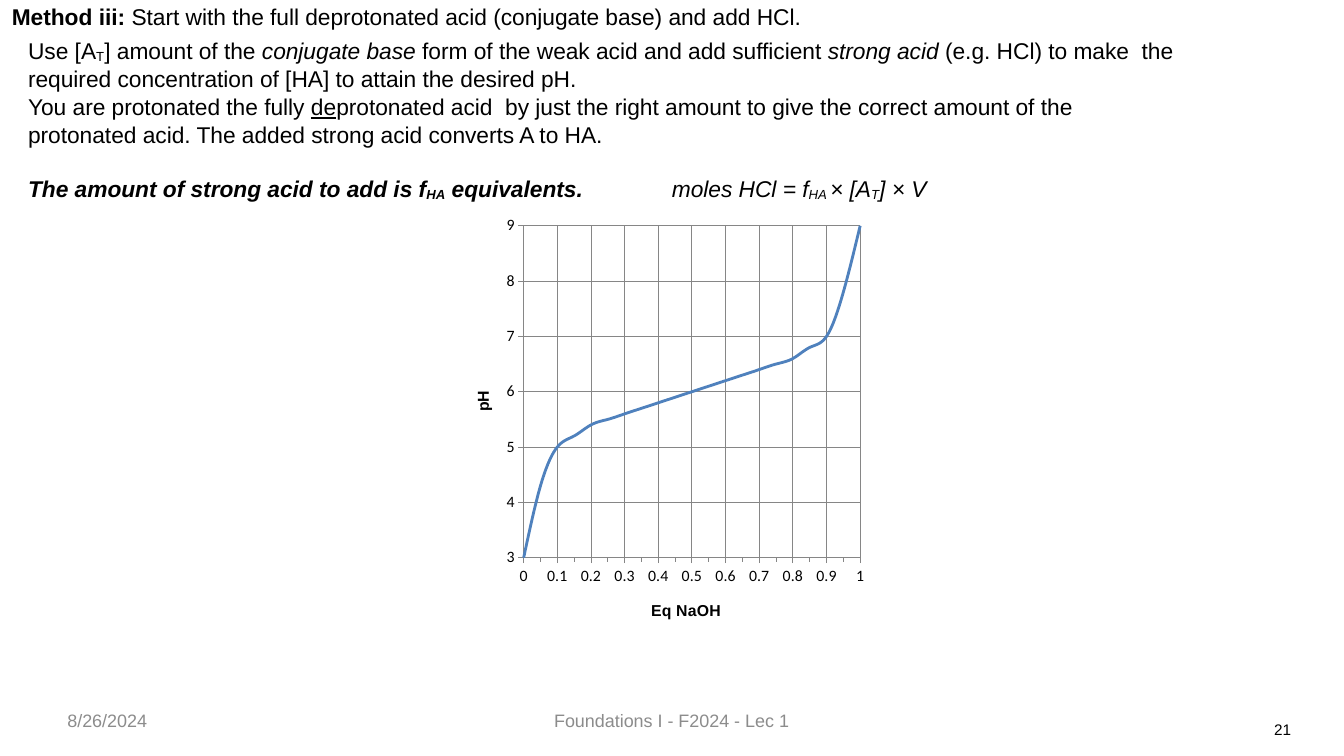
from lxml.etree import SubElement
from pptx import Presentation
from pptx.chart.data import XyChartData
from pptx.dml.color import RGBColor
from pptx.enum.chart import XL_CHART_TYPE as Kind, XL_TICK_MARK as Tick
from pptx.enum.text import (MSO_ANCHOR as Anchor, MSO_UNDERLINE as Under,
                            PP_ALIGN as Align)
from pptx.oxml.ns import qn
from pptx.util import Pt

BLACK = RGBColor(0x00, 0x00, 0x00)
GREY = RGBColor(0x8C, 0x8C, 0x8C)
GRID = RGBColor(0x86, 0x86, 0x86)
BLUE = RGBColor(0x4F, 0x81, 0xBD)
SCALE = 9144
FLAGS = {"b": ("bold", True), "i": ("italic", True),
         "u": ("underline", Under.HEAVY_LINE)}

HEAD = [[("Method iii: ", "b"),
         ("Start with the full deprotonated acid (conjugate base) and add HCl.", "")]]
BODY = [
    [("Use [A", ""), ("T", "_"), ("] amount of the ", ""), ("conjugate base ", "i"),
     ("form of the weak acid and add sufficient ", ""), ("strong acid ", "i"),
     ("(e.g. HCl) to make  the required concentration of [HA] "
      "to attain the desired pH.", "")],
    [("You are protonated the fully ", ""), ("de", "u"),
     ("protonated acid  by just the right amount to give the correct amount of the "
      "protonated acid. The added strong acid converts A to HA.", "")],
    [("The amount of strong acid to add is f", "bi"), ("HA", "bi_"),
     (" equivalents.\t", "bi"), ("moles HCl = f", "i"), ("HA ", "i_"),
     ("× [A", "i"), ("T", "i_"), ("] × V", "i")],
]
PH = [3, 4.3, 5, 5.2, 5.4, 5.5, 5.6, 5.7, 5.8, 5.9, 6,
      6.1, 6.2, 6.3, 6.4, 6.5, 6.6, 6.8, 7, 7.8, 9]


def put(obj, vals):
    """Set each attribute named in a dict."""
    for key, val in vals.items():
        setattr(obj, key, val)


def place(node, index, vals, inner=False):
    """Give a chart part a manual layout."""
    for old in node.findall(qn("c:layout")):
        node.remove(old)
    layout = SubElement(node, qn("c:layout"))
    node.insert(index, layout)
    manual = SubElement(layout, qn("c:manualLayout"))
    rows = {"layoutTarget": "inner"} if inner else {}
    rows.update(xMode="edge", yMode="edge")
    rows.update(zip("xywh", vals))
    for tag, val in rows.items():
        SubElement(manual, qn("c:" + tag)).set("val", str(val))


class Deck:
    """Hold the style and the current slide."""

    def __init__(self, wide, high):
        """Start a deck with one blank slide."""
        self.prs = Presentation()
        put(self.prs, {"slide_width": wide * SCALE, "slide_height": high * SCALE})
        self.slide = self.prs.slides.add_slide(self.prs.slide_layouts[6])
        self.label = {"size": Pt(12.5), "name": "Calibri", "bold": False}
        self.title = {"size": Pt(12.5), "name": "Arial", "bold": True}

    def text(self, box, paras, size=18, color=BLACK, pad=(0, 0),
             anchor=Anchor.TOP, form=None, tight=0, tab=0):
        """Add a text box of flagged runs."""
        shape = self.slide.shapes.add_textbox(*(n * SCALE for n in box))
        frame = shape.text_frame
        side, top = (n * SCALE for n in pad)
        put(frame, {"word_wrap": True, "vertical_anchor": anchor,
                    "margin_left": side, "margin_right": side,
                    "margin_top": top, "margin_bottom": top})
        for num, runs in enumerate(paras):
            para = frame.add_paragraph() if num else frame.paragraphs[0]
            put(para, form or {})
            if tab:
                stops = SubElement(para._p.get_or_add_pPr(), qn("a:tabLst"))
                stop = SubElement(stops, qn("a:tab"))
                stop.set("pos", str(tab * SCALE))
                stop.set("algn", "l")
            for words, flags in runs:
                run = para.add_run()
                run.text = words
                put(run.font, {"size": Pt(size), "name": "Arial"})
                put(run.font, dict(FLAGS[f] for f in flags if f in FLAGS))
                run.font.color.rgb = color
                props = run._r.get_or_add_rPr()
                if tight:
                    props.set("spc", str(tight))
                if "_" in flags:
                    props.set("baseline", "-8000")
        return frame

    def axis(self, axis, name, spot, vals, turn=0):
        """Style one axis and its title."""
        put(axis, {"has_major_gridlines": True, "major_tick_mark": Tick.OUTSIDE,
                   "minor_tick_mark": Tick.NONE, **vals})
        for line in (axis.format.line, axis.major_gridlines.format.line):
            line.color.rgb = GRID
            line.width = Pt(0.75)
        put(axis.tick_labels.font, self.label)
        axis.tick_labels.font.color.rgb = BLACK
        frame = axis.axis_title.text_frame
        frame.text = name
        font = frame.paragraphs[0].runs[0].font
        put(font, self.title)
        font.color.rgb = BLACK
        frame._txBody.bodyPr.set("rot", str(turn * 60000))
        place(axis.axis_title._element, 1, spot)

    def curve(self, box, points):
        """Add the smooth titration curve."""
        data = XyChartData()
        series = data.add_series("Series 1")
        for eq, ph in points:
            series.add_data_point(eq, ph)
        chart = self.slide.shapes.add_chart(
            Kind.XY_SCATTER_SMOOTH_NO_MARKERS, *(n * SCALE for n in box), data).chart
        put(chart, {"has_title": False, "has_legend": False})
        put(chart.font, self.label)
        chart.font.color.rgb = BLACK
        plot = chart.plots[0]
        plot.vary_by_categories = False
        trace = plot.series[0]
        trace.format.line.color.rgb = BLUE
        trace.format.line.width = Pt(2.25)
        smooth = trace._element.find(qn("c:smooth"))
        if smooth is None:
            smooth = SubElement(trace._element, qn("c:smooth"))
        smooth.set("val", "1")
        self.axis(chart.category_axis, "Eq NaOH", (0.445, 0.905),
                  {"minimum_scale": 0, "maximum_scale": 1, "major_unit": 0.1,
                   "minor_unit": 0.05, "minor_tick_mark": Tick.OUTSIDE})
        self.axis(chart.value_axis, "pH", (0.03, 0.425),
                  {"minimum_scale": 3, "maximum_scale": 9, "major_unit": 1}, -90)
        area = chart._chartSpace.find(".//" + qn("c:plotArea"))
        place(area, 0, (0.155, 0.054, 0.783, 0.761), True)


def main():
    """Build the slide and save it."""
    deck = Deck(1476, 830)
    deck.text((13, 2, 1140, 33), HEAD, pad=(0, 1), tight=-3,
              form={"space_before": Pt(1)})
    deck.curve((502, 222, 472, 479), [(n / 20, ph) for n, ph in enumerate(PH)])
    body = deck.text((21, 35, 1282, 201), BODY, pad=(10, 5), tight=-3, tab=707,
                     form={"line_spacing": 1.02})
    body.paragraphs[2].space_before = Pt(21)
    foot = {"anchor": Anchor.MIDDLE}
    deck.text((74, 769, 344, 44), [[("8/26/2024", "")]], 14.2, GREY, **foot)
    deck.text((504, 769, 467, 44), [[("Foundations I - F2024 - Lec 1", "")]],
              14.2, GREY, form={"alignment": Align.CENTER}, **foot)
    deck.text((1386, 791, 32, 20), [[("21", "")]], 12.1,
              form={"alignment": Align.RIGHT}, **foot)
    deck.prs.save("out.pptx")


if __name__ == "__main__":
    main()
